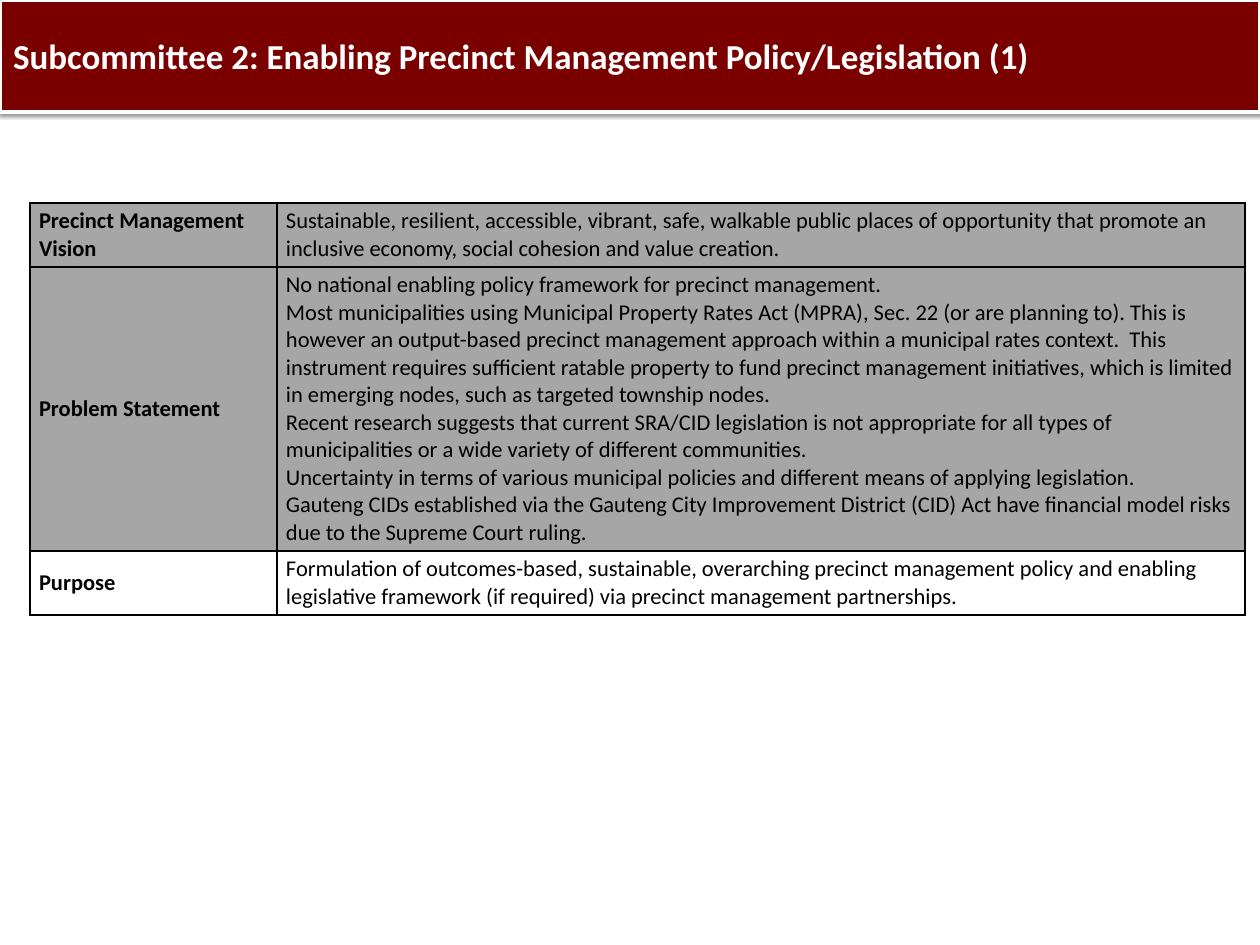
import pptx
import pptx.util
import pptx.oxml
import pptx.dml.color
import pptx.enum.text

PX = 9525 * 96 // 90  # EMU in one px, at 90 px to the inch
FONT = "Calibri"
COLORS = {"band": "7A0000", "white": "FFFFFF", "black": "000000", "gray": "A6A6A6"}
NS = 'xmlns:a="http://schemas.openxmlformats.org/drawingml/2006/main"'
SHADOW = (f'<a:effectLst {NS}><a:outerShdw blurRad="39400" dist="20300" dir="5400000" '
          'rotWithShape="0"><a:srgbClr val="{}"><a:alpha val="38000"/></a:srgbClr>'
          '</a:outerShdw></a:effectLst>')
BORDER = (f'<a:{{}} {NS} w="12700"><a:solidFill><a:srgbClr val="{{}}"/></a:solidFill>'
          '<a:prstDash val="solid"/></a:{}>')


def color(name):
    return pptx.dml.color.RGBColor.from_string(COLORS[name])


class Deck:
    def __init__(self, wide, high):
        self.prs = pptx.Presentation()
        self.prs.slide_width = wide * PX
        self.prs.slide_height = high * PX
        self.slide = self.prs.slides.add_slide(self.prs.slide_layouts[5])

    def text(self, frame, lines, size, ink, bold):
        frame.text = "\n".join(lines)
        for para in frame.paragraphs:
            para.alignment = pptx.enum.text.PP_ALIGN.LEFT
            font = para.font
            font.name, font.size, font.bold = FONT, pptx.util.Pt(size), bold
            font.color.rgb = color(ink)

    def title(self, text, x, y, w, h):
        band = self.slide.shapes.title
        band.left, band.top, band.width, band.height = (v * PX for v in (x, y, w, h))
        band.fill.solid()
        band.fill.fore_color.rgb = color("band")
        band.line.color.rgb = color("white")
        band.line.width = pptx.util.Pt(3)
        band._element.spPr.append(pptx.oxml.parse_xml(SHADOW.format(COLORS["black"])))
        frame = band.text_frame
        frame.auto_size = pptx.enum.text.MSO_AUTO_SIZE.NONE
        frame.vertical_anchor = pptx.enum.text.MSO_ANCHOR.MIDDLE
        frame.margin_left = frame.margin_right = 13 * PX
        frame.margin_top = frame.margin_bottom = 6 * PX
        self.text(frame, [text], 28, "white", True)

    def cell(self, cell, lines, fill, head):
        if fill:
            cell.fill.solid()
            cell.fill.fore_color.rgb = color(fill)
        else:
            cell.fill.background()
        if head:
            cell.vertical_anchor = pptx.enum.text.MSO_ANCHOR.MIDDLE
        self.text(cell.text_frame, lines, 18, "black", head)
        # Borders come before the fill in the cell's properties
        props = cell._tc.get_or_add_tcPr()
        for i, side in enumerate(("lnL", "lnR", "lnT", "lnB")):
            props.insert(i, pptx.oxml.parse_xml(BORDER.format(side, COLORS["black"], side)))

    def table(self, rows, x, y, cols, highs):
        grid = self.slide.shapes.add_table(
            len(rows), len(cols), x * PX, y * PX, sum(cols) * PX, sum(highs) * PX).table
        grid.first_row = grid.horz_banding = False
        for col, wide in zip(grid.columns, cols):
            col.width = wide * PX
        for row, high, (head, body, fill) in zip(grid.rows, highs, rows):
            row.height = high * PX
            self.cell(row.cells[0], [head], fill, True)
            self.cell(row.cells[1], body, fill, False)


ROWS = [
    ("Precinct Management Vision", [
        "Sustainable, resilient, accessible, vibrant, safe, walkable public places of "
        "opportunity that promote an inclusive economy, social cohesion and value creation.",
    ], "gray"),
    ("Problem Statement", [
        "No national enabling policy framework for precinct management.",
        "Most municipalities using Municipal Property Rates Act (MPRA), Sec. 22 (or are "
        "planning to). This is however an output-based precinct management approach within "
        "a municipal rates context.  This instrument requires sufficient ratable property "
        "to fund precinct management initiatives, which is limited in emerging nodes, such "
        "as targeted township nodes.",
        "Recent research suggests that current SRA/CID legislation is not appropriate for "
        "all types of municipalities or a wide variety of different communities.",
        "Uncertainty in terms of various municipal policies and different means of applying "
        "legislation.",
        "Gauteng CIDs established via the Gauteng City Improvement District (CID) Act have "
        "financial model risks due to the Supreme Court ruling.",
    ], "gray"),
    ("Purpose", [
        "Formulation of outcomes-based, sustainable, overarching precinct management policy "
        "and enabling legislative framework (if required) via precinct management "
        "partnerships.",
    ], None),
]


def main():
    deck = Deck(1260, 945)
    # Title band
    deck.title("Subcommittee 2: Enabling Precinct Management Policy/Legislation (1)",
               0, 0, 1260, 112)
    # Vision, problem and purpose
    deck.table(ROWS, 30, 203, (247, 968), (64, 284, 64))
    deck.prs.save("out.pptx")


if __name__ == "__main__":
    main()
